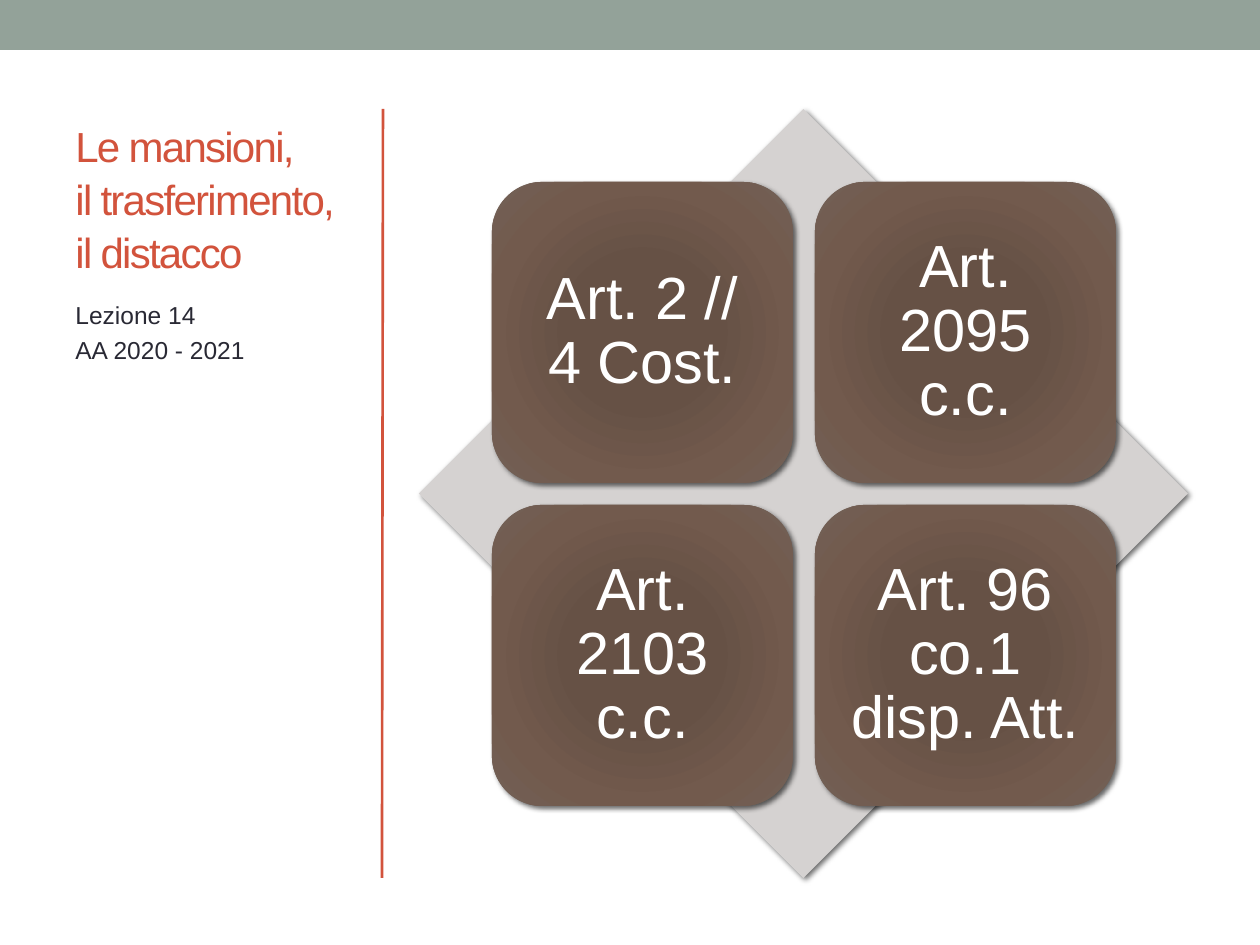
from lxml import etree
from pptx import Presentation
from pptx import util as u
from pptx.dml.color import RGBColor
from pptx.enum import shapes, text
from pptx.oxml.ns import qn

PX = 914400 // 126
SAGE = RGBColor(0x93, 0xA2, 0x99)
RED = RGBColor(0xD2, 0x53, 0x3C)
DARK = RGBColor(0x29, 0x29, 0x34)
GREY = RGBColor(0xD5, 0xD2, 0xD1)
WHITE = RGBColor(0xFF, 0xFF, 0xFF)
STOPS = [(0, "685044"), (34, "665145"), (70, "725A4D"), (100, "726056")]
NS = 'xmlns:a="http://schemas.openxmlformats.org/drawingml/2006/main"'
SHADE = (f'<a:effectLst {NS}><a:outerShdw blurRad="38100" dist="25400" '
         'dir="2700000" rotWithShape="0"><a:srgbClr val="000000">'
         '<a:alpha val="60000"/></a:srgbClr></a:outerShdw></a:effectLst>')
GRAD = (f'<a:gradFill {NS} rotWithShape="1"><a:gsLst>'
        + "".join(f'<a:gs pos="{pos * 1000}"><a:srgbClr val="{tone}"/></a:gs>'
                  for pos, tone in STOPS)
        + '</a:gsLst><a:path path="circle"><a:fillToRect l="50000" t="50000" '
        'r="50000" b="50000"/></a:path></a:gradFill>')


def draw(kind, left, top, wide, high, fill):
    shape = slide.shapes.add_shape(kind, left * PX, top * PX, wide * PX, high * PX)
    shape.shadow.inherit = False
    shape.fill.solid()
    shape.fill.fore_color.rgb = fill
    shape.line.fill.background()
    return shape


def write(para, words, size, color):
    run = para.add_run()
    run.text = words
    run.font.name = "Arial"
    run.font.size = u.Pt(size)
    run.font.color.rgb = color
    return run


deck = Presentation()
deck.slide_width, deck.slide_height = u.Inches(10), u.Inches(7.5)
slide = deck.slides.add_slide(deck.slide_layouts[6])

# Top band and divider
draw(shapes.MSO_SHAPE.RECTANGLE, 0, 0, 1260, 50, SAGE)
rule = slide.shapes.add_connector(
    shapes.MSO_CONNECTOR.STRAIGHT, 383 * PX, 109 * PX, 382 * PX, 878 * PX)
rule.line.color.rgb = RED
rule.line.width = u.Pt(1.5)
etree.SubElement(rule._element.spPr, qn("a:effectLst"))

# Title
title = slide.shapes.add_textbox(63 * PX, 109 * PX, 295 * PX, 174 * PX).text_frame
title.word_wrap = True
title.vertical_anchor = text.MSO_ANCHOR.BOTTOM
para = title.paragraphs[0]
para.line_spacing = 1.05
for i, words in enumerate(["Le mansioni,", "il trasferimento,", "il distacco"]):
    if i:
        para.add_line_break()
    run = write(para, words, 24, RED)
    run.font._element.set("spc", "-100")

# Lesson and year
notes = slide.shapes.add_textbox(63 * PX, 294 * PX, 295 * PX, 585 * PX).text_frame
notes.word_wrap = True
write(notes.paragraphs[0], "Lezione 14", 14, DARK)
para = notes.add_paragraph()
para.space_before = u.Pt(3)
write(para, "AA 2020 - 2021", 14, DARK)

# Diamond behind the tiles
gem = draw(shapes.MSO_SHAPE.DIAMOND, 419, 109, 769, 769, GREY)
spPr = gem._element.spPr
spPr.replace(spPr.find(qn("a:effectLst")), etree.fromstring(SHADE))

# Two by two grid of tiles
SIDE, STEP = 301, 323
laws = ["Art. 2 // 4 Cost.", "Art. 2095 c.c.",
        "Art. 2103 c.c.", "Art. 96 co.1 disp. Att."]
for i, law in enumerate(laws):
    row, col = divmod(i, 2)
    tile = draw(shapes.MSO_SHAPE.ROUNDED_RECTANGLE, 492 + col * STEP,
                182 + row * STEP, SIDE, SIDE, GREY)
    spPr = tile._element.spPr
    spPr.replace(spPr.find(qn("a:solidFill")), etree.fromstring(GRAD))
    spPr.replace(spPr.find(qn("a:effectLst")), etree.fromstring(SHADE))
    frame = tile.text_frame
    frame.word_wrap = True
    frame.vertical_anchor = text.MSO_ANCHOR.MIDDLE
    frame.margin_left = frame.margin_right = 17 * PX
    frame.margin_top = frame.margin_bottom = 17 * PX
    para = frame.paragraphs[0]
    para.alignment = text.PP_ALIGN.CENTER
    para.line_spacing = 0.9
    write(para, law, 34, WHITE)

deck.save("out.pptx")
